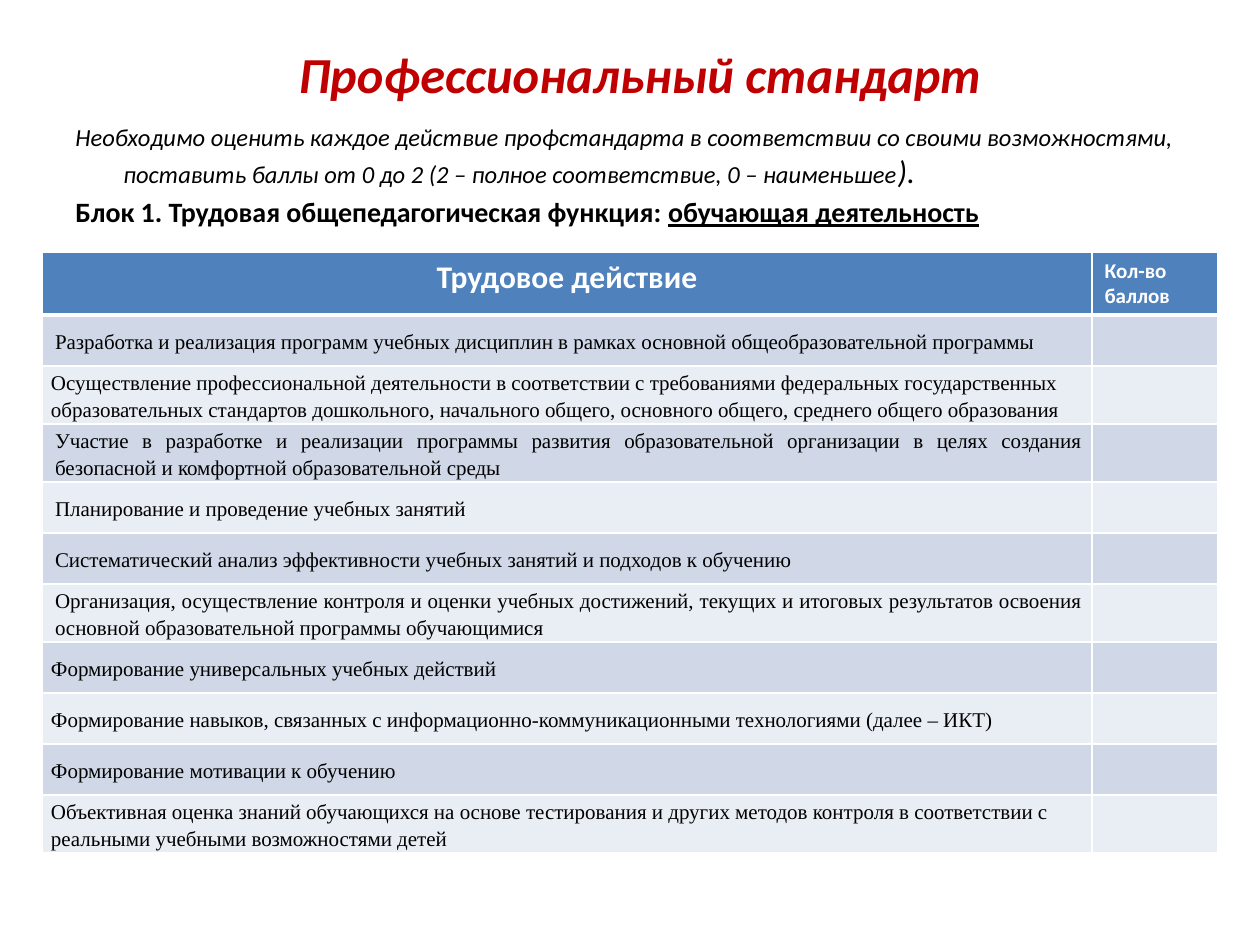
from lxml import etree
from pptx import Presentation
from pptx import util as u
from pptx.dml.color import RGBColor
from pptx.enum import text
from pptx.oxml.ns import qn

RED = RGBColor(0xC0, 0x00, 0x00)
BLACK = RGBColor(0x00, 0x00, 0x00)
WHITE = RGBColor(0xFF, 0xFF, 0xFF)
BLUE = RGBColor(0x4F, 0x81, 0xBD)
BANDS = RGBColor(0xD0, 0xD8, 0xE8), RGBColor(0xE9, 0xED, 0xF4)
SANS, SERIF = "Calibri", "Times New Roman"
LEFT, CENTER, JUST = (text.PP_ALIGN.LEFT, text.PP_ALIGN.CENTER,
                      text.PP_ALIGN.JUSTIFY)

# Wording, alignment, left indent in px
ACTS = [
    ("Разработка и реализация программ учебных дисциплин в рамках основной "
     "общеобразовательной программы", JUST, 4),
    ("Осуществление профессиональной деятельности в соответствии с "
     "требованиями федеральных государственных образовательных стандартов "
     "дошкольного, начального общего, основного общего, среднего общего "
     "образования", LEFT, 0),
    ("Участие в разработке и реализации программы развития образовательной "
     "организации в целях создания безопасной и комфортной образовательной "
     "среды", JUST, 4),
    ("Планирование и проведение учебных занятий", JUST, 4),
    ("Систематический анализ эффективности учебных занятий и подходов к "
     "обучению", JUST, 4),
    ("Организация, осуществление контроля и оценки учебных достижений, "
     "текущих и итоговых результатов освоения основной образовательной "
     "программы обучающимися", JUST, 4),
    ("Формирование универсальных учебных действий", JUST, 0),
    ("Формирование навыков, связанных с информационно-коммуникационными "
     "технологиями (далее – ИКТ)", JUST, 0),
    ("Формирование мотивации к обучению", LEFT, 0),
    ("Объективная оценка знаний обучающихся на основе тестирования и других "
     "методов контроля в соответствии с реальными учебными возможностями "
     "детей", LEFT, 0),
]


def px(n):
    return u.Emu(round(n * 914400 / 126))


class Deck:
    """Holds the style and the current slide."""

    def __init__(self, wide, high):
        self.prs = Presentation()
        self.prs.slide_width, self.prs.slide_height = px(wide), px(high)
        self.slide = self.prs.slides.add_slide(self.prs.slide_layouts[5])

    def run(self, par, words, size, color=BLACK, face=SANS, bold=False,
            slant=False, line=False):
        run = par.add_run()
        run.text = words
        font = run.font
        font.name, font.size, font.color.rgb = face, u.Pt(size), color
        font.bold, font.italic, font.underline = bold, slant, line

    def indent(self, par, left, first=0):
        props = par._p.get_or_add_pPr()
        props.set("marL", str(px(left)))
        props.set("indent", str(px(first)))

    def place(self, shape, box):
        shape.left, shape.top, shape.width, shape.height = map(px, box)

    def title(self, words, box):
        shape = self.slide.shapes.title
        self.place(shape, box)
        frame = shape.text_frame
        frame.auto_size = text.MSO_AUTO_SIZE.NONE
        frame.vertical_anchor = text.MSO_ANCHOR.MIDDLE
        par = frame.paragraphs[0]
        par.alignment = CENTER
        self.run(par, words, 28.8, RED, bold=True, slant=True)

    def note(self, box, pars):
        """Add a text box; each paragraph is a list of (words, run style)."""
        frame = self.slide.shapes.add_textbox(*map(px, box)).text_frame
        frame.word_wrap = True
        for i, runs in enumerate(pars):
            par = frame.add_paragraph() if i else frame.paragraphs[0]
            par.space_before = u.Pt(3)
            self.indent(par, 48, -48)
            for words, style in runs:
                self.run(par, words, **style)

    def edge(self, cell, low=1):
        """Draw white borders; low is the bottom width in points."""
        props = cell._tc.get_or_add_tcPr()
        for i, (side, wide) in enumerate(zip("LRTB", (1, 1, 1, low))):
            line = etree.Element(qn(f"a:ln{side}"), w=str(u.Pt(wide)))
            fill = etree.SubElement(line, qn("a:solidFill"))
            etree.SubElement(fill, qn("a:srgbClr"), val=str(WHITE))
            props.insert(i, line)

    def paint(self, cell, color, low=1):
        cell.fill.solid()
        cell.fill.fore_color.rgb = color
        self.edge(cell, low)

    def table(self, left, top, cols, high, heads, acts):
        rows = len(acts) + 1
        grid = self.slide.shapes.add_table(
            rows, len(cols), px(left), px(top), px(sum(cols)),
            px(high * rows)).table
        for col, wide in zip(grid.columns, cols):
            col.width = px(wide)
        for i, (words, size, align) in enumerate(heads):
            cell = grid.cell(0, i)
            self.paint(cell, BLUE, 3)
            par = cell.text_frame.paragraphs[0]
            par.alignment = align
            self.run(par, words, size, WHITE, bold=True)
        for i, (words, align, left) in enumerate(acts):
            for j in range(len(cols)):
                self.paint(grid.cell(i + 1, j), BANDS[i % 2])
            cell = grid.cell(i + 1, 0)
            cell.vertical_anchor = text.MSO_ANCHOR.MIDDLE
            cell.margin_left = cell.margin_right = px(9)
            cell.margin_top = cell.margin_bottom = 0
            par = cell.text_frame.paragraphs[0]
            par.alignment, par.line_spacing = align, 1.15
            self.indent(par, left)
            self.run(par, words, 12, face=SERIF)


def main():
    deck = Deck(1260, 945)
    deck.title("Профессиональный стандарт", (73, 42, 1134, 63))
    bold = dict(size=16, bold=True)
    deck.note((63, 116, 1155, 124), [
        [("Необходимо оценить каждое действие профстандарта в соответствии "
          "со своими возможностями, поставить баллы от 0 до 2 (2 – полное "
          "соответствие, 0 – наименьшее", dict(size=14, slant=True)),
         (").", dict(size=18, slant=True))],
        [("Блок 1. Трудовая общепедагогическая функция: ", bold),
         ("обучающая деятельность", dict(bold, line=True))],
    ])
    heads = [("Трудовое действие", 18, CENTER), ("Кол-во баллов", 12, LEFT)]
    deck.table(42, 252, (1050, 126), 51, heads, ACTS)
    deck.prs.save("out.pptx")


if __name__ == "__main__":
    main()
